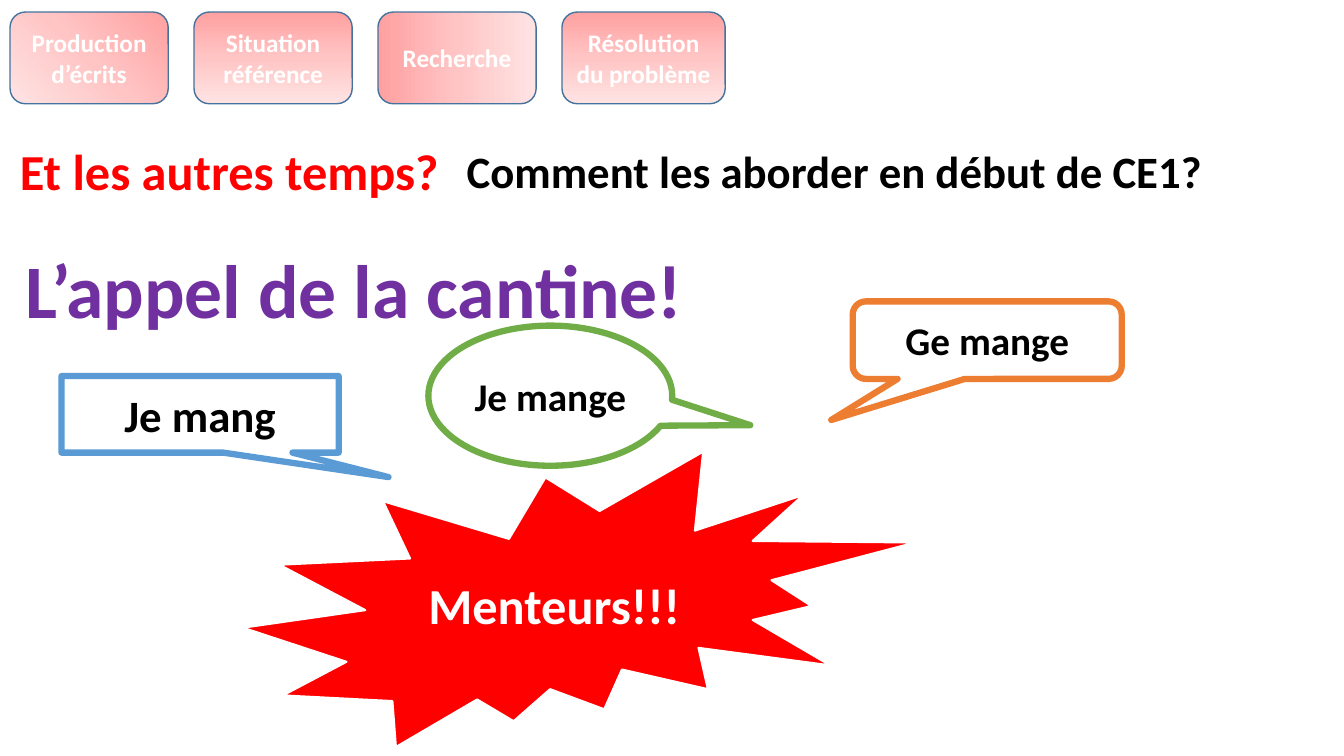
from lxml.etree import SubElement
from pptx import Presentation
from pptx.dml.color import RGBColor
from pptx.enum.shapes import MSO_SHAPE
from pptx.enum.text import MSO_ANCHOR, MSO_AUTO_SIZE, PP_ALIGN
from pptx.oxml.ns import qn
from pptx.util import Pt

WHITE = RGBColor(0xFF, 0xFF, 0xFF)
BLACK = RGBColor(0, 0, 0)
RED = RGBColor(0xFF, 0, 0)
PURPLE = RGBColor(0x70, 0x30, 0xA0)
BLUE = RGBColor(0x5B, 0x9B, 0xD5)
ORANGE = RGBColor(0xED, 0x7D, 0x31)
GREEN = RGBColor(0x70, 0xAD, 0x47)
STEEL = RGBColor(0x43, 0x73, 0x9E)
PINKS = {
    0: RGBColor(0xFF, 0xA0, 0xA0),
    50: RGBColor(0xFF, 0xC5, 0xC5),
    100: RGBColor(0xFF, 0xE3, 0xE3),
}

STEP_LEFT, STEP_TOP, STEP_PITCH, STEP_HEIGHT = 7.2, 8.6, 131.4, 65.5
STEPS = [
    ("Production d’écrits", 113, None),
    ("Situation référence", 113, 90),
    ("Recherche", 113, 0),
    ("Résolution du problème", 116.6, 90),
]
HEADINGS = [
    ("Et les autres temps?", (7.2, 96.5, 316.8, 51), 36, RED),
    ("Comment les aborder en début de CE1?", (326.2, 99.4, 551.5, 46), 32, BLACK),
    ("L’appel de la cantine!", (10.8, 169.9, 489.6, 72.7), 54, PURPLE),
]
ANSWERS = [
    ("Je mang", MSO_SHAPE.RECTANGULAR_CALLOUT,
     (43.9, 268.6, 198, 54.7), (0.68, 0.82), 32, BLUE),
    ("Ge mange", MSO_SHAPE.ROUNDED_RECTANGULAR_CALLOUT,
     (609.1, 215.3, 192.2, 55.4), (-0.58, 1.03, 0.17), 28, ORANGE),
    ("Je mange", MSO_SHAPE.OVAL_CALLOUT,
     (306, 232.6, 174.2, 100.1), (0.82, 0.21), 28, GREEN),
]


def write(frame, text, size, color, align=PP_ALIGN.LEFT, wrap=True):
    frame.word_wrap = wrap
    paragraph = frame.paragraphs[0]
    paragraph.alignment = align
    run = paragraph.add_run()
    run.text = text
    run.font.name = "Calibri"
    run.font.size = Pt(size)
    run.font.bold = True
    run.font.color.rgb = color


def add_heading(slide, text, box, size, color):
    heading = slide.shapes.add_textbox(*map(Pt, box))
    write(heading.text_frame, text, size, color, wrap=False)
    heading.text_frame.auto_size = MSO_AUTO_SIZE.SHAPE_TO_FIT_TEXT


def add_figure(slide, kind, box, text, size, color, fill, outline, weight):
    figure = slide.shapes.add_shape(kind, *map(Pt, box))
    figure.shadow.inherit = False
    figure.fill.solid()
    figure.fill.fore_color.rgb = fill
    figure.line.color.rgb = outline
    figure.line.width = Pt(weight)
    figure.text_frame.vertical_anchor = MSO_ANCHOR.MIDDLE
    write(figure.text_frame, text, size, color, align=PP_ALIGN.CENTER)
    return figure


def shade(step, angle):
    properties = step.fill._xPr
    solid = properties.find(qn("a:solidFill"))
    gradient = SubElement(properties, qn("a:gradFill"), rotWithShape="1")
    properties.replace(solid, gradient)
    stops = SubElement(gradient, qn("a:gsLst"))
    for percent, pink in PINKS.items():
        stop = SubElement(stops, qn("a:gs"), pos=str(percent * 1000))
        SubElement(stop, qn("a:srgbClr"), val=str(pink))
    if angle is None:
        circle = SubElement(gradient, qn("a:path"), {"path": "circle"})
        SubElement(circle, qn("a:fillToRect"), l="100000", b="100000")
    else:
        SubElement(gradient, qn("a:lin"), ang=str(angle * 60000), scaled="1")


def add_step(slide, index, text, width, angle):
    box = (STEP_LEFT + index * STEP_PITCH, STEP_TOP, width, STEP_HEIGHT)
    step = add_figure(slide, MSO_SHAPE.ROUNDED_RECTANGLE, box, text, 18,
                      WHITE, PINKS[50], STEEL, 1)
    shade(step, angle)


def add_answer(slide, text, kind, box, tail, size, outline):
    answer = add_figure(slide, kind, box, text, size, BLACK, WHITE, outline, 4.5)
    for index, value in enumerate(tail):
        answer.adjustments[index] = value


def main():
    presentation = Presentation()
    presentation.slide_width = Pt(960)
    presentation.slide_height = Pt(540)
    slide = presentation.slides.add_slide(presentation.slide_layouts[6])
    for index, step in enumerate(STEPS):
        add_step(slide, index, *step)
    for heading in HEADINGS:
        add_heading(slide, *heading)
    for answer in ANSWERS:
        add_answer(slide, *answer)
    add_figure(slide, MSO_SHAPE.EXPLOSION2, (173.5, 322.6, 480.2, 211),
               "Menteurs!!!", 36, WHITE, RED, WHITE, 1.5)
    presentation.save("out.pptx")


main()
